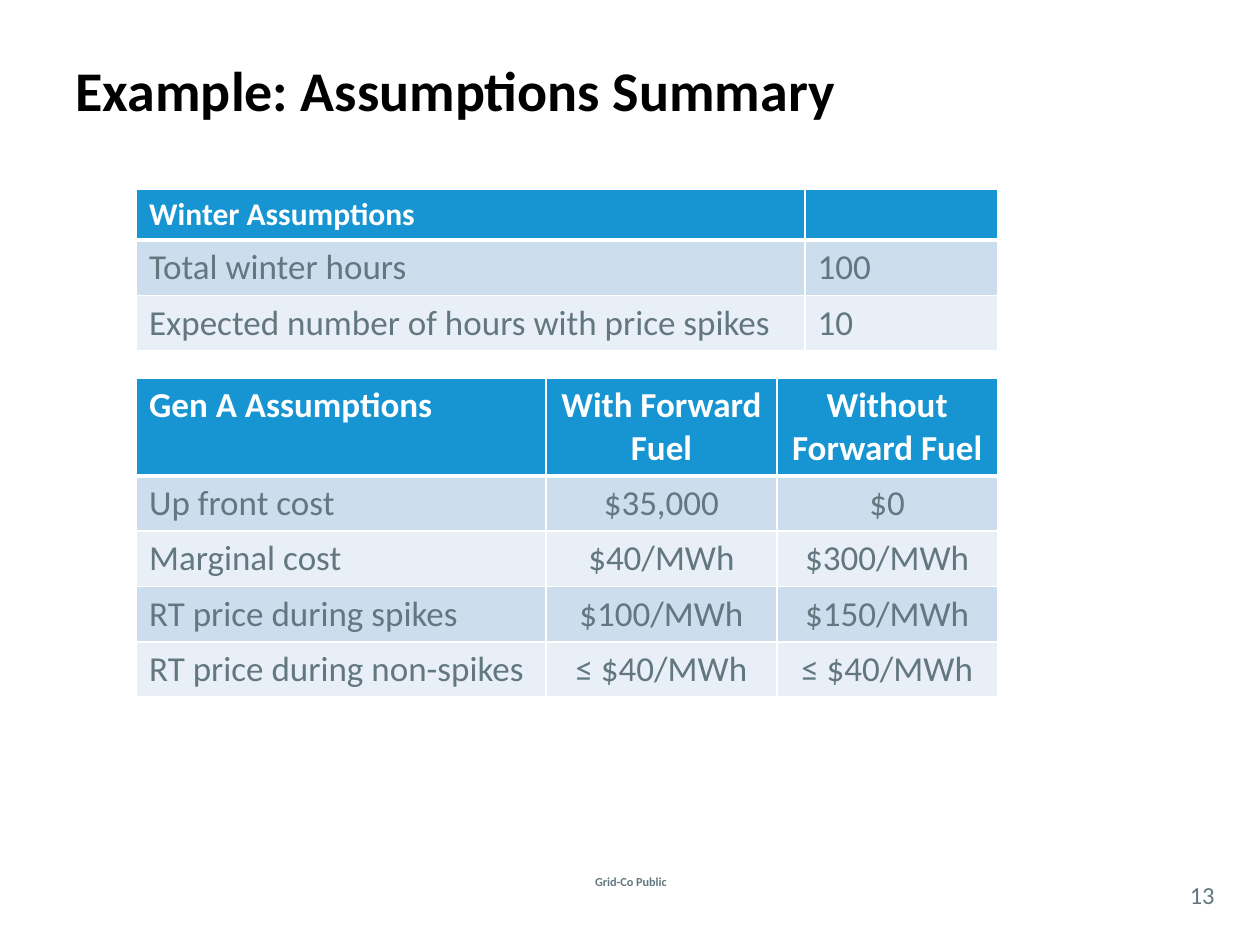
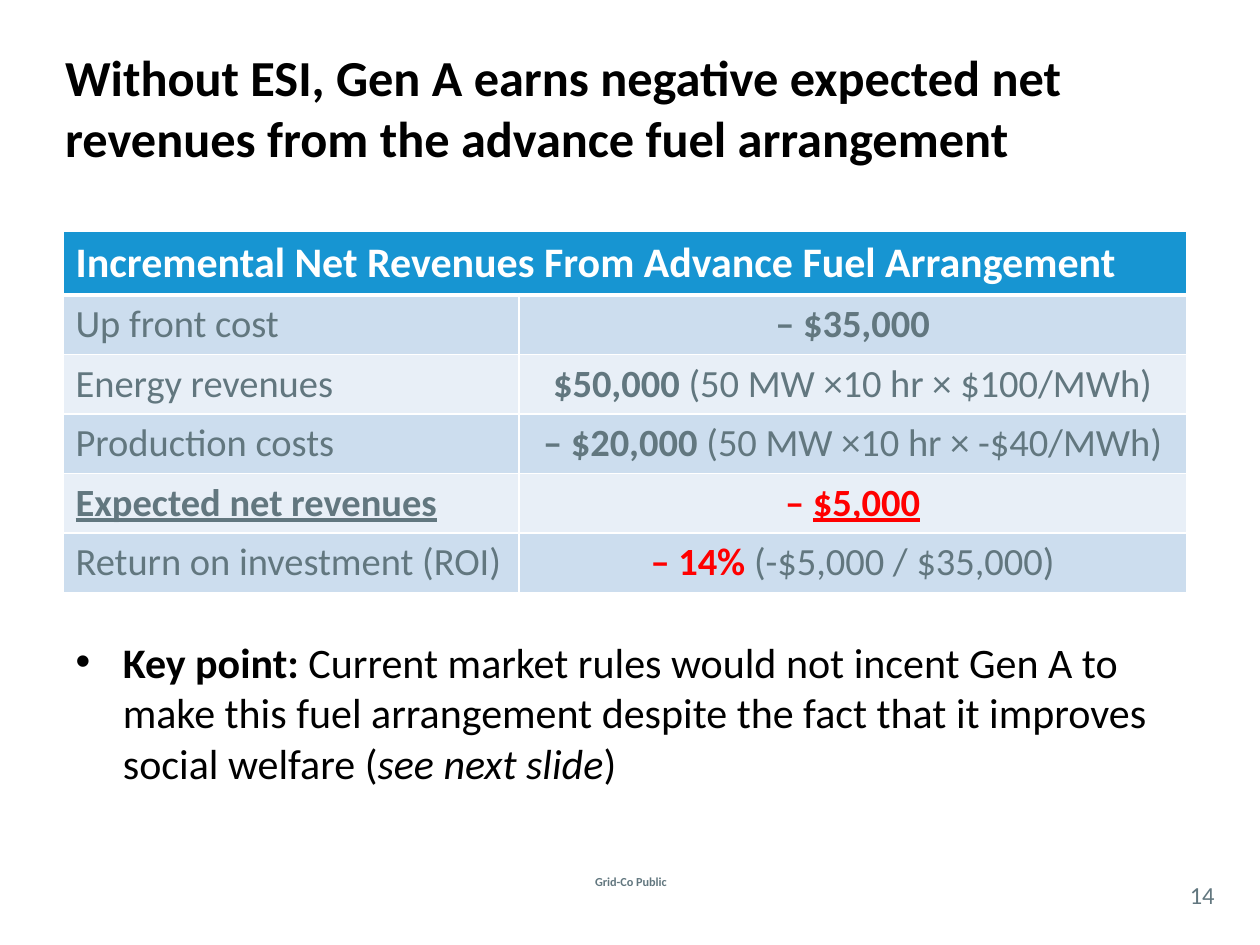
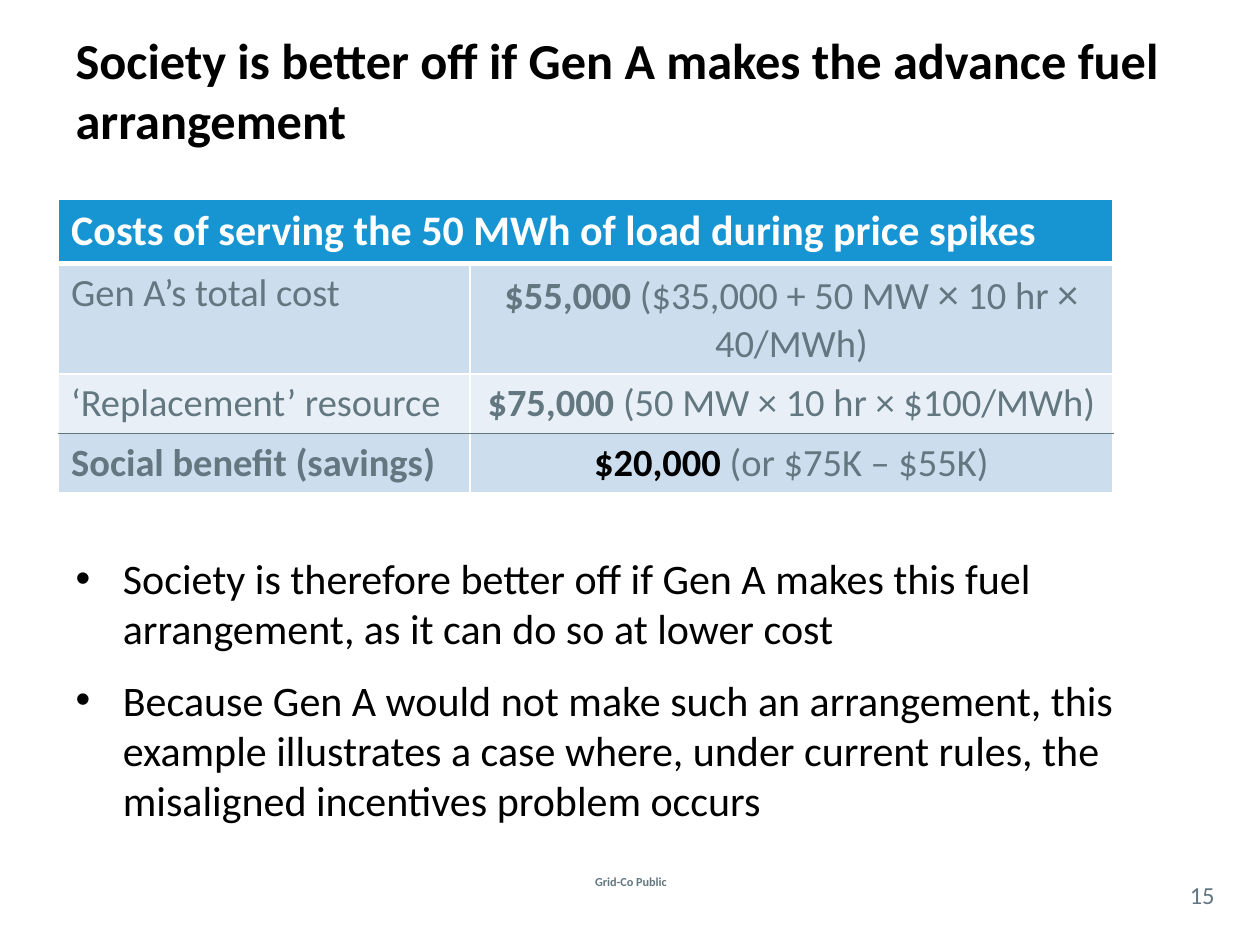
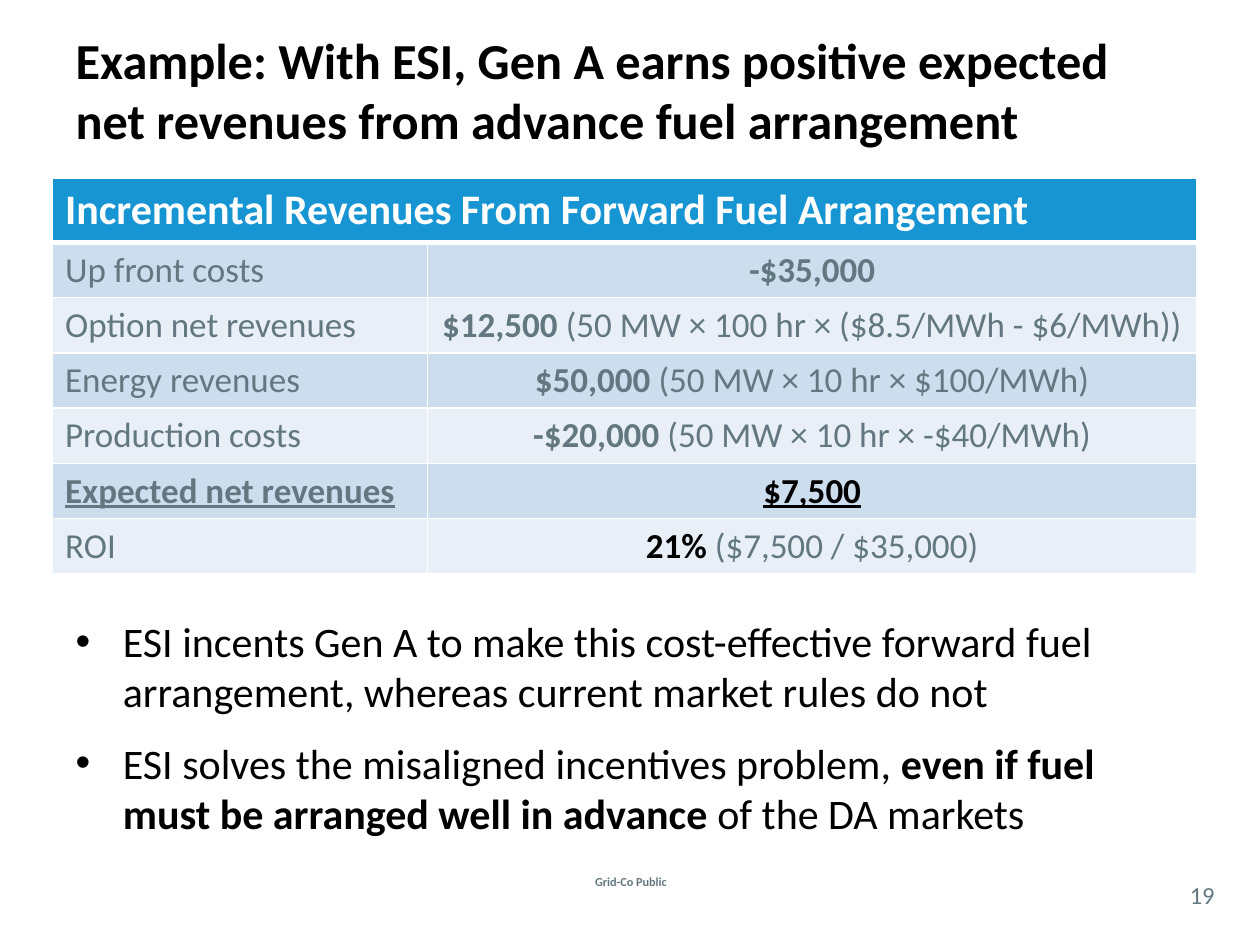
from dataclasses import dataclass

from lxml import etree
from pptx import Presentation
from pptx.dml.color import RGBColor
from pptx.enum.text import MSO_ANCHOR, MSO_AUTO_SIZE, PP_ALIGN
from pptx.oxml.ns import qn
from pptx.util import Pt

LEFT, MID = PP_ALIGN.LEFT, PP_ALIGN.CENTER
TOP, CENTER = MSO_ANCHOR.TOP, MSO_ANCHOR.MIDDLE
FIXED = MSO_AUTO_SIZE.NONE
LIST_PAGE, TITLE_PAGE = 1, 5


@dataclass(frozen=True)
class Theme:
    font: str = "Calibri"
    black: str = "000000"
    white: str = "FFFFFF"
    slate: str = "62777F"
    red: str = "FF0000"
    blue: str = "1795D2"
    dark: str = "CCDDEE"
    light: str = "E8EFF7"
    title: float = 28.8
    large: int = 32
    body: int = 24
    page: int = 14
    foot: int = 7
    gap: int = 12
    hang: int = 27


THEME = Theme()
HUES = {"r": THEME.red, "k": THEME.black}
TITLE_BOX = (36, 10, 648, 82)


def write(para, text, size, color, align=LEFT, bold=False):
    """Flags in a run: b bold, i italic, u underline, r red, k black, x body size."""
    parts = [(text, "b" if bold else "")] if isinstance(text, str) else text
    para.alignment = align
    for words, flags in parts:
        run = para.add_run()
        run.text = words
        font = run.font
        font.name = THEME.font
        font.size = Pt(THEME.body if "x" in flags else size)
        font.bold = "b" in flags
        font.italic = "i" in flags
        font.underline = "u" in flags
        hue = next((HUES[f] for f in flags if f in HUES), color)
        font.color.rgb = RGBColor.from_string(hue)


def place(shape, box):
    shape.left, shape.top, shape.width, shape.height = map(Pt, box)


def add_label(slide, box, text, size, bold=False, inset=None):
    frame = slide.shapes.add_textbox(*map(Pt, box)).text_frame
    frame.word_wrap = True
    frame.vertical_anchor = CENTER
    if inset is not None:
        frame.margin_left = frame.margin_right = Pt(inset)
        frame.margin_top = frame.margin_bottom = Pt(inset)
    write(frame.paragraphs[0], text, size, THEME.slate, MID, bold)


def add_page(deck, layout, number, title, size=THEME.title, box=TITLE_BOX):
    slide = deck.slides.add_slide(deck.slide_layouts[layout])
    head = slide.shapes.title
    place(head, box)
    frame = head.text_frame
    frame.auto_size = FIXED
    frame.vertical_anchor = CENTER
    write(frame.paragraphs[0], title, size, THEME.black, bold=True)
    add_label(slide, (307.5, 496, 106, 16), "Grid-Co Public", THEME.foot, bold=True)
    add_label(slide, (672, 501, 30, 21), str(number), THEME.page, inset=0)
    return slide


def add_list(slide, box, items):
    body = slide.placeholders[1]
    place(body, box)
    frame = body.text_frame
    frame.auto_size = FIXED
    frame.vertical_anchor = TOP
    for i, item in enumerate(items):
        para = frame.add_paragraph() if i else frame.paragraphs[0]
        props = para._p.get_or_add_pPr()
        props.set("marL", str(Pt(THEME.hang)))
        props.set("indent", str(-Pt(THEME.hang)))
        etree.SubElement(props, qn("a:buChar"), char="•")
        para.space_before = Pt(THEME.gap if i else 0)
        write(para, item, THEME.body, THEME.black)


def set_edges(cell, edges):
    props = cell._tc.get_or_add_tcPr()
    for i, (side, (color, width)) in enumerate(edges.items()):
        line = etree.Element(qn("a:ln" + side), w=str(Pt(width)))
        fill = etree.SubElement(line, qn("a:solidFill"))
        etree.SubElement(fill, qn("a:srgbClr"), val=color)
        props.insert(i, line)


def row_edge(above, rule):
    if above == 0:
        return THEME.white, 3
    return (THEME.slate if above == rule else THEME.white), 1


def add_grid(slide, spot, cols, tall, rows, size, head_size, mid=True, rule=None):
    frame = slide.shapes.add_table(
        len(rows), len(cols), *map(Pt, (*spot, sum(cols), sum(tall))))
    table = frame.table
    for col, width in zip(table.columns, cols):
        col.width = Pt(width)
    for row, height in zip(table.rows, tall):
        row.height = Pt(height)
    if len(rows[0]) < len(cols):
        table.cell(0, 0).merge(table.cell(0, len(cols) - 1))
    plain = (THEME.white, 1)
    for r, row in enumerate(rows):
        shade = THEME.dark if r % 2 else THEME.light
        for c in range(len(cols)):
            cell = table.cell(r, c)
            cell.fill.solid()
            cell.fill.fore_color.rgb = RGBColor.from_string(shade if r else THEME.blue)
            set_edges(cell, {"L": plain, "R": plain,
                             "T": row_edge(r - 1, rule), "B": row_edge(r, rule)})
            if c < len(row) and row[c]:
                write(cell.text_frame.paragraphs[0], row[c],
                      size if r else head_size,
                      THEME.slate if r else THEME.white,
                      MID if mid and c else LEFT, bold=r == 0)


def sum_up(lead, rest):
    return [(lead, "b"), (rest, "")]


def add_inputs(deck):
    slide = add_page(deck, TITLE_PAGE, 13, "Example: Assumptions Summary", THEME.large)
    add_grid(slide, (78, 216), (234, 132, 126), [56] + [31.6] * 4, [
        ("Gen A Assumptions", "With Forward Fuel", "Without Forward Fuel"),
        ("Up front cost", "$35,000", "$0"),
        ("Marginal cost", "$40/MWh", "$300/MWh"),
        ("RT price during spikes", "$100/MWh", "$150/MWh"),
        ("RT price during non-spikes", "≤ $40/MWh", "≤ $40/MWh"),
    ], 20, 20)
    add_grid(slide, (78, 108), (382, 110), [29.2] + [31.6] * 2, [
        ("Winter Assumptions", ""),
        ("Total winter hours", "100"),
        ("Expected number of hours with price spikes", "10"),
    ], 20, 18, mid=False)


def add_loss(deck):
    slide = add_page(
        deck, LIST_PAGE, 14,
        "Without ESI, Gen A earns negative expected net revenues "
        "from the advance fuel arrangement", box=(30, 20, 660, 82))
    add_list(slide, (36, 360, 648, 106), [[
        ("Key point: ", "b"),
        ("Current market rules would not incent Gen A to make this fuel "
         "arrangement despite the fact that it improves social welfare (", ""),
        ("see next slide", "i"), (")", ""),
    ]])
    add_grid(slide, (36, 132), (260.5, 381.5), [36.5] + [34] * 5, [
        ("Incremental Net Revenues From Advance Fuel Arrangement",),
        ("Up front cost", [("– $35,000", "b")]),
        ("Energy revenues", sum_up("$50,000", " (50 MW ×10 hr × $100/MWh)")),
        ("Production costs", sum_up("– $20,000", " (50 MW ×10 hr × -$40/MWh)")),
        ([("Expected net revenues", "bu")], [("– ", "br"), ("$5,000", "bur")]),
        ("Return on investment (ROI)",
         [("– 14% ", "br"), ("(-$5,000 / $35,000)", "")]),
    ], 22, 24)


def add_gain(deck):
    slide = add_page(
        deck, LIST_PAGE, 15,
        "Society is better off if Gen A makes the advance fuel arrangement")
    add_list(slide, (36, 312, 648, 174), [
        "Society is therefore better off if Gen A makes this fuel arrangement, "
        "as it can do so at lower cost",
        "Because Gen A would not make such an arrangement, this example "
        "illustrates a case where, under current rules, the misaligned "
        "incentives problem occurs",
    ])
    add_grid(slide, (33.5, 114), (235, 367.5), [36.5, 63.3, 34, 34], [
        ("Costs of serving the 50 MWh of load during price spikes",),
        ("Gen A’s total cost",
         [("$55,000 ", "b"), ("($35,000 + 50 MW ", ""), ("×", "x"),
          (" 10 hr ", ""), ("×", "x"), (" 40/MWh)", "")]),
        ("‘Replacement’ resource",
         sum_up("$75,000", " (50 MW × 10 hr × $100/MWh)")),
        ([("Social benefit (savings)", "b")],
         [("$20,000", "bk"), (" (or $75K – $55K)", "")]),
    ], 22, 24, rule=2)


def add_cure(deck):
    slide = add_page(
        deck, LIST_PAGE, 19,
        "Example: With ESI, Gen A earns positive expected net revenues "
        "from advance fuel arrangement")
    add_list(slide, (36, 348, 648, 126), [
        "ESI incents Gen A to make this cost-effective forward fuel "
        "arrangement, whereas current market rules do not",
        [("ESI solves the misaligned incentives problem, ", ""),
         ("even if fuel must be arranged well in advance", "b"),
         (" of the DA markets", "")],
    ])
    add_grid(slide, (30, 102), (214.3, 439.7), [36.5] + [31.6] * 6, [
        ("Incremental Revenues From Forward Fuel Arrangement",),
        ("Up front costs", [("-$35,000", "b")]),
        ("Option net revenues",
         sum_up("$12,500", " (50 MW × 100 hr × ($8.5/MWh - $6/MWh))")),
        ("Energy revenues", sum_up("$50,000", " (50 MW × 10 hr × $100/MWh)")),
        ("Production costs", sum_up("-$20,000", " (50 MW × 10 hr × -$40/MWh)")),
        ([("Expected net revenues", "bu")], [("$7,500", "buk")]),
        ("ROI", [("21% ", "bk"), ("($7,500 / $35,000)", "")]),
    ], 20, 24)


def main():
    deck = Presentation()
    deck.slide_width, deck.slide_height = Pt(720), Pt(540)
    for build in (add_inputs, add_loss, add_gain, add_cure):
        build(deck)
    deck.save("out.pptx")


if __name__ == "__main__":
    main()
